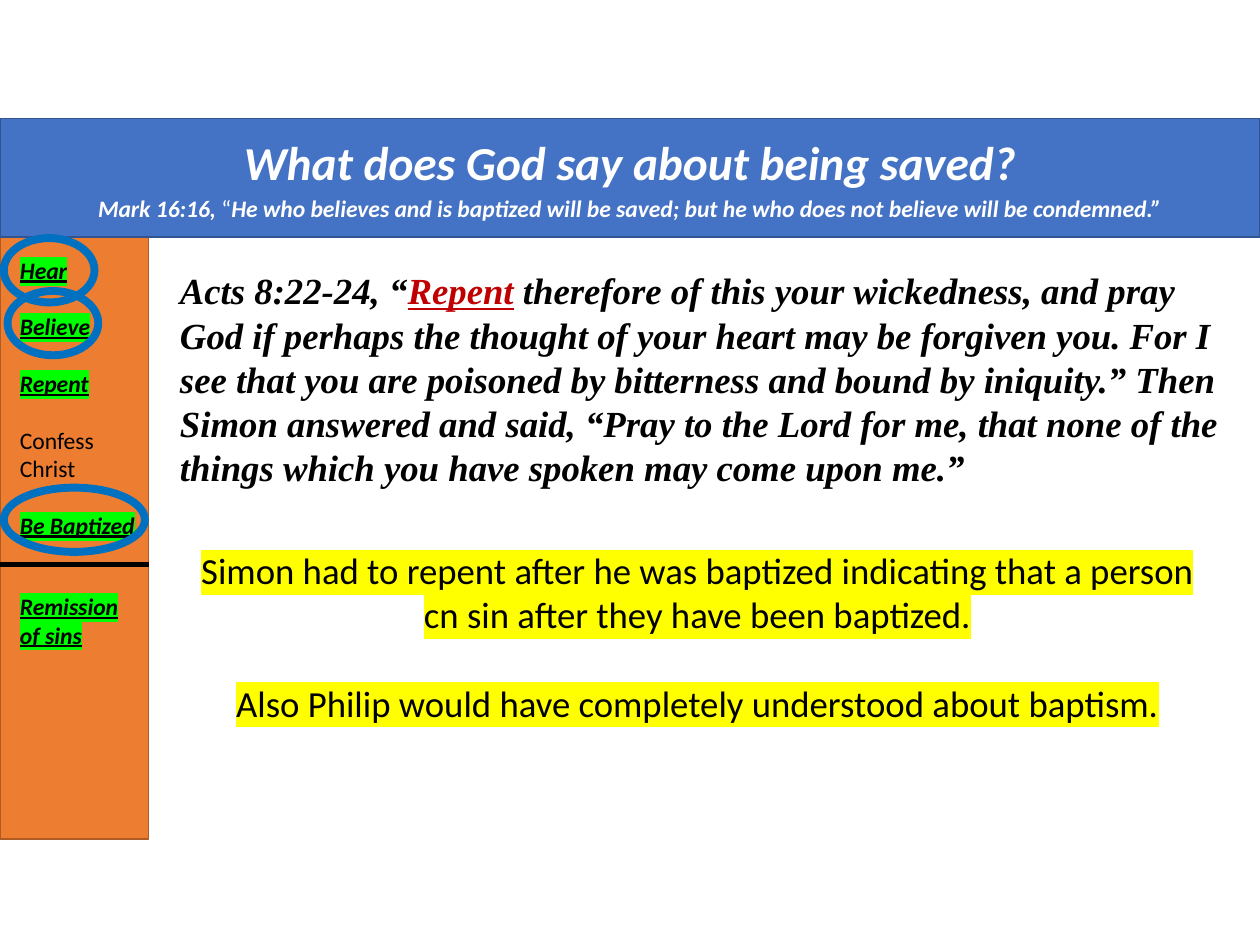
"""Build a slide on what God says about being saved."""
from lxml import etree
from pptx import Presentation
from pptx.dml.color import RGBColor
from pptx.enum import shapes, text
from pptx.oxml import ns
from pptx.util import Inches, Pt

BLACK = RGBColor(0x00, 0x00, 0x00)
WHITE = RGBColor(0xFF, 0xFF, 0xFF)
RED = RGBColor(0xC0, 0x00, 0x00)
BLUE = RGBColor(0x44, 0x72, 0xC4)
DARK_BLUE = RGBColor(0x32, 0x54, 0x91)
RING_BLUE = RGBColor(0x00, 0x70, 0xC0)
ORANGE = RGBColor(0xED, 0x7D, 0x31)
DARK_ORANGE = RGBColor(0xAF, 0x5C, 0x24)
GREEN = RGBColor(0x00, 0xFF, 0x00)
YELLOW = RGBColor(0xFF, 0xFF, 0x00)

STRONG = dict(bold=True, italic=True)
MARKED = dict(STRONG, underline=True, highlight=GREEN)
SCRIPTURE = dict(STRONG, font="Times New Roman", size=21)
TITLE = dict(STRONG, size=27, color=WHITE)
VERSE = dict(STRONG, size=13.5, color=WHITE)
NOTE = dict(size=21, highlight=YELLOW)

BANNER = [
    [("What does God say about being saved?", TITLE)],
    [("Mark 16:16, ", VERSE),
     ("“", dict(size=13.5, color=WHITE)),
     ("He who believes and is baptized will be saved; but he who does not "
      "believe will be condemned.”", VERSE)],
]
STEPS = [
    [("Hear", MARKED)],
    [("Believe", MARKED)],
    [("Repent", MARKED)],
    [("Confess Christ", {})],
    [("Be Baptized", MARKED)],
]
RESULT = [[("Remission of sins", MARKED)]]
PASSAGE = [[
    ("Acts 8:22-24, “", SCRIPTURE),
    ("Repent", dict(SCRIPTURE, color=RED, underline=True)),
    (" therefore of this your wickedness, and pray God if perhaps the thought "
     "of your heart may be forgiven you. For I see that you are poisoned by "
     "bitterness and bound by iniquity.” Then Simon answered and said, “Pray "
     "to the Lord for me, that none of the things which you have spoken may "
     "come upon me.”", SCRIPTURE),
]]
NOTES = [
    [("Simon had to repent after he was baptized indicating that a person cn "
      "sin after they have been baptized.", NOTE)],
    [("Also Philip would have completely understood about baptism.", NOTE)],
]
RINGS = [(0.06, 2.31, 0.72), (0.03, 1.89, 0.72), (0.03, 3.87, 1.12)]

SIDEBAR_WIDTH = 1.18
BANNER_TOP = BANNER_HEIGHT = 0.94
SIDEBAR_TOP = BANNER_TOP + BANNER_HEIGHT


def style_run(run, font="Calibri", size=13.5, color=BLACK, bold=False,
              italic=False, underline=False, highlight=None):
    face = run.font
    face.name, face.size = font, Pt(size)
    face.bold, face.italic, face.underline = bold, italic, underline
    face.color.rgb = color
    if highlight is not None:
        mark = etree.Element(ns.qn("a:highlight"))
        etree.SubElement(mark, ns.qn("a:srgbClr"), val=str(highlight))
        run._r.rPr.find(ns.qn("a:solidFill")).addnext(mark)


def write(frame, paragraphs, gap=0, align=text.PP_ALIGN.LEFT):
    frame.word_wrap = True
    for number, pieces in enumerate(paragraphs):
        paragraph = frame.add_paragraph() if number else frame.paragraphs[0]
        paragraph.alignment = align
        if number:
            paragraph.space_before = Pt(gap)
        for words, style in pieces:
            run = paragraph.add_run()
            run.text = words
            style_run(run, **style)


def add_text(slide, box, paragraphs, **layout):
    frame = slide.shapes.add_textbox(*map(Inches, box)).text_frame
    write(frame, paragraphs, **layout)


def add_outline(slide, kind, box, line, width, fill=None):
    shape = slide.shapes.add_shape(kind, *map(Inches, box))
    shape.shadow.inherit = False
    if fill is None:
        shape.fill.background()
    else:
        shape.fill.solid()
        shape.fill.fore_color.rgb = fill
    shape.line.color.rgb = line
    shape.line.width = Pt(width)
    return shape


def main():
    deck = Presentation()
    deck.slide_width, deck.slide_height = Inches(10), Inches(7.5)
    slide = deck.slides.add_slide(deck.slide_layouts[6])
    kinds, center = shapes.MSO_SHAPE, text.PP_ALIGN.CENTER

    add_text(slide, (1.33, 2.08, 8.61, 1.87), PASSAGE)
    add_outline(slide, kinds.RECTANGLE, (0, SIDEBAR_TOP, SIDEBAR_WIDTH, 4.78),
                DARK_ORANGE, 1, ORANGE)
    add_text(slide, (0.06, 1.98, 1.12, 2.37), STEPS, gap=16.2)

    banner = add_outline(slide, kinds.RECTANGLE,
                         (0, BANNER_TOP, 10, BANNER_HEIGHT), DARK_BLUE, 1, BLUE)
    banner.text_frame.vertical_anchor = text.MSO_ANCHOR.MIDDLE
    write(banner.text_frame, BANNER, gap=2.7, align=center)

    add_text(slide, (1.33, 4.3, 8.41, 1.51), NOTES, gap=25.2, align=center)
    add_text(slide, (0.06, 4.65, 1.12, 0.78), RESULT)

    divider = slide.shapes.add_connector(
        shapes.MSO_CONNECTOR.STRAIGHT,
        *map(Inches, (0, 4.48, SIDEBAR_WIDTH, 4.48)))
    divider.line.color.rgb = BLACK
    divider.line.width = Pt(3)
    etree.SubElement(divider._element.spPr, ns.qn("a:effectLst"))

    for left, top, width in RINGS:
        add_outline(slide, kinds.OVAL, (left, top, width, 0.51), RING_BLUE, 4.5)

    deck.save("out.pptx")


if __name__ == "__main__":
    main()
